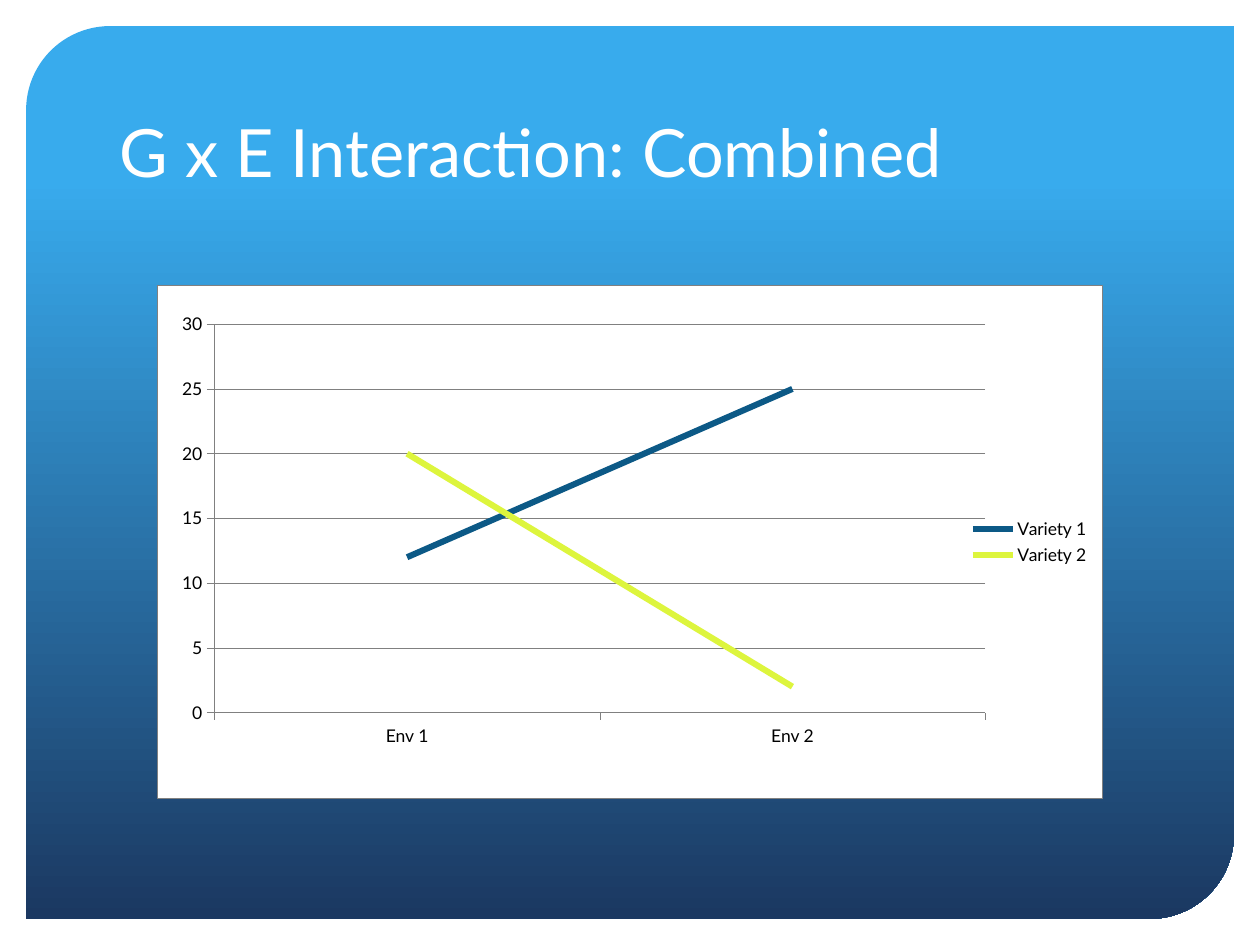
from lxml.etree import SubElement
from pptx import Presentation
from pptx.chart.data import CategoryChartData
from pptx.dml.color import RGBColor
from pptx.enum.chart import XL_CHART_TYPE, XL_LEGEND_POSITION, XL_MARKER_STYLE, XL_TICK_MARK
from pptx.enum.shapes import MSO_SHAPE
from pptx.enum.text import MSO_ANCHOR
from pptx.oxml import parse_xml
from pptx.oxml.ns import nsdecls, qn
from pptx.util import Inches, Pt

WHITE = RGBColor(0xFF, 0xFF, 0xFF)
BLACK = RGBColor(0x00, 0x00, 0x00)
GREY = RGBColor(0x80, 0x80, 0x80)
SKY = RGBColor(0x38, 0xAB, 0xED)
NAVY = RGBColor(0x1B, 0x38, 0x61)
BLUE = RGBColor(0x0C, 0x59, 0x86)
LIME = RGBColor(0xDD, 0xF5, 0x3D)


class Deck:
    font = "Lato"
    hairline = Pt(0.25)
    columns, rows = 40, 30

    def __init__(self):
        self.prs = Presentation()
        self.prs.slide_width, self.prs.slide_height = Inches(10), Inches(7.5)
        self.s = self.prs.slides.add_slide(self.prs.slide_layouts[6])

    def box(self, col, row, width, height):
        x, y = self.prs.slide_width / self.columns, self.prs.slide_height / self.rows
        return int(col * x), int(row * y), int(width * x), int(height * y)

    def style_font(self, font, size, color):
        font.name, font.size = self.font, Pt(size)
        font.color.rgb = color

    def style_line(self, line, color, width):
        line.color.rgb, line.width = color, width

    def panel(self, cell, stops):
        sp = self.s.shapes.add_shape(MSO_SHAPE.ROUND_2_DIAG_RECTANGLE, *self.box(*cell))
        sp.shadow.inherit = False
        sp.adjustments[0], sp.adjustments[1] = 0.094, 0
        sp.fill.gradient()
        sp.fill.gradient_angle = 270
        for stop, (position, color) in zip(sp.fill.gradient_stops, stops):
            stop.position, stop.color.rgb = position, color
        sp.line.fill.background()

    def title(self, cell, text):
        tf = self.s.shapes.add_textbox(*self.box(*cell)).text_frame
        tf.word_wrap = True
        tf.vertical_anchor = MSO_ANCHOR.BOTTOM
        r = tf.paragraphs[0].add_run()
        r.text = text
        self.style_font(r.font, 38, WHITE)

    def area(self, border=None):
        line = f'<a:solidFill><a:srgbClr val="{border}"/></a:solidFill>' if border else "<a:noFill/>"
        return parse_xml(
            f'<c:spPr {nsdecls("c", "a")}><a:solidFill><a:srgbClr val="{WHITE}"/></a:solidFill>'
            f'<a:ln w="{self.hairline}">{line}</a:ln></c:spPr>')

    def place_plot(self, chart, shares):
        plot = chart._chartSpace.chart.plotArea
        for old in plot.findall(qn("c:layout")):
            plot.remove(old)
        layout = parse_xml(f'<c:layout {nsdecls("c")}/>')
        manual = SubElement(layout, qn("c:manualLayout"))
        settings = [("layoutTarget", "inner"), ("xMode", "edge"), ("yMode", "edge")]
        for tag, value in settings + list(zip("xywh", shares)):
            SubElement(manual, qn(f"c:{tag}")).set("val", str(value))
        plot.insert(0, layout)
        plot.append(self.area())

    def line_chart(self, cell, categories, series, plot_shares):
        data = CategoryChartData()
        data.categories = categories
        for name, values, _ in series:
            data.add_series(name, values)
        chart = self.s.shapes.add_chart(XL_CHART_TYPE.LINE, *self.box(*cell), data).chart
        self.style_font(chart.font, 10, BLACK)
        chart.has_title = False
        chart.has_legend = True
        chart.legend.position = XL_LEGEND_POSITION.RIGHT
        chart.legend.include_in_layout = False
        chart.plots[0].vary_by_categories = False
        for line, (_, _, color) in zip(chart.plots[0].series, series):
            line.smooth = False
            line.marker.style = XL_MARKER_STYLE.NONE
            self.style_line(line.format.line, color, Pt(3.5))
        for axis in (chart.category_axis, chart.value_axis):
            axis.major_tick_mark = XL_TICK_MARK.OUTSIDE
            axis.minor_tick_mark = XL_TICK_MARK.NONE
            self.style_line(axis.format.line, GREY, self.hairline)
        axis = chart.value_axis
        axis.minimum_scale, axis.maximum_scale, axis.major_unit = 0, 30, 5
        self.style_line(axis.major_gridlines.format.line, GREY, self.hairline)
        self.place_plot(chart, plot_shares)
        chart._chartSpace.chart.addnext(self.area(GREY))


def main():
    deck = Deck()
    deck.panel((0.83, 0.83, 38.34, 28.34), [(0.17, SKY), (1, NAVY)])
    deck.title((3.4, 1.68, 33.16, 4.56), "G x E Interaction: Combined")
    deck.line_chart(
        (5, 9.05, 30, 16.3), ["Env 1", "Env 2"],
        [("Variety 1", (12, 25), BLUE), ("Variety 2", (20, 2), LIME)],
        (0.06, 0.076, 0.816, 0.757))
    deck.prs.save("out.pptx")


if __name__ == "__main__":
    main()
